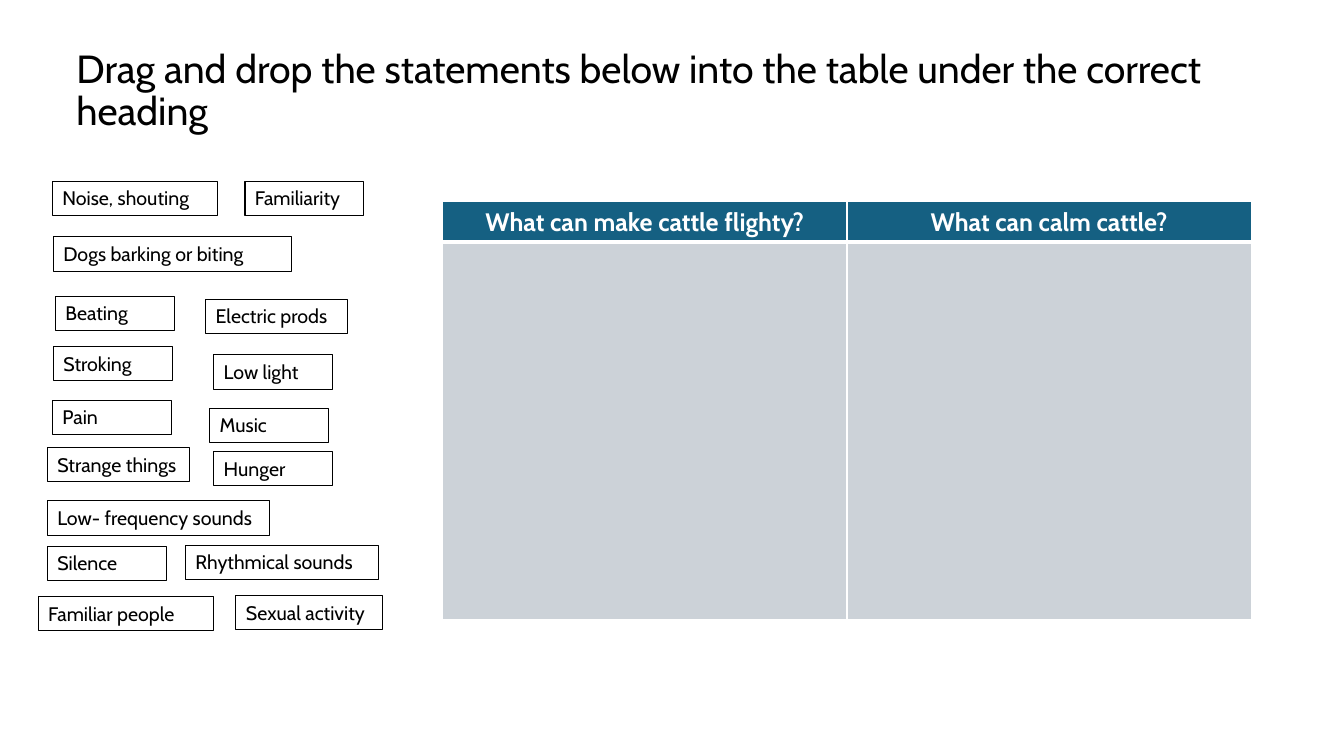
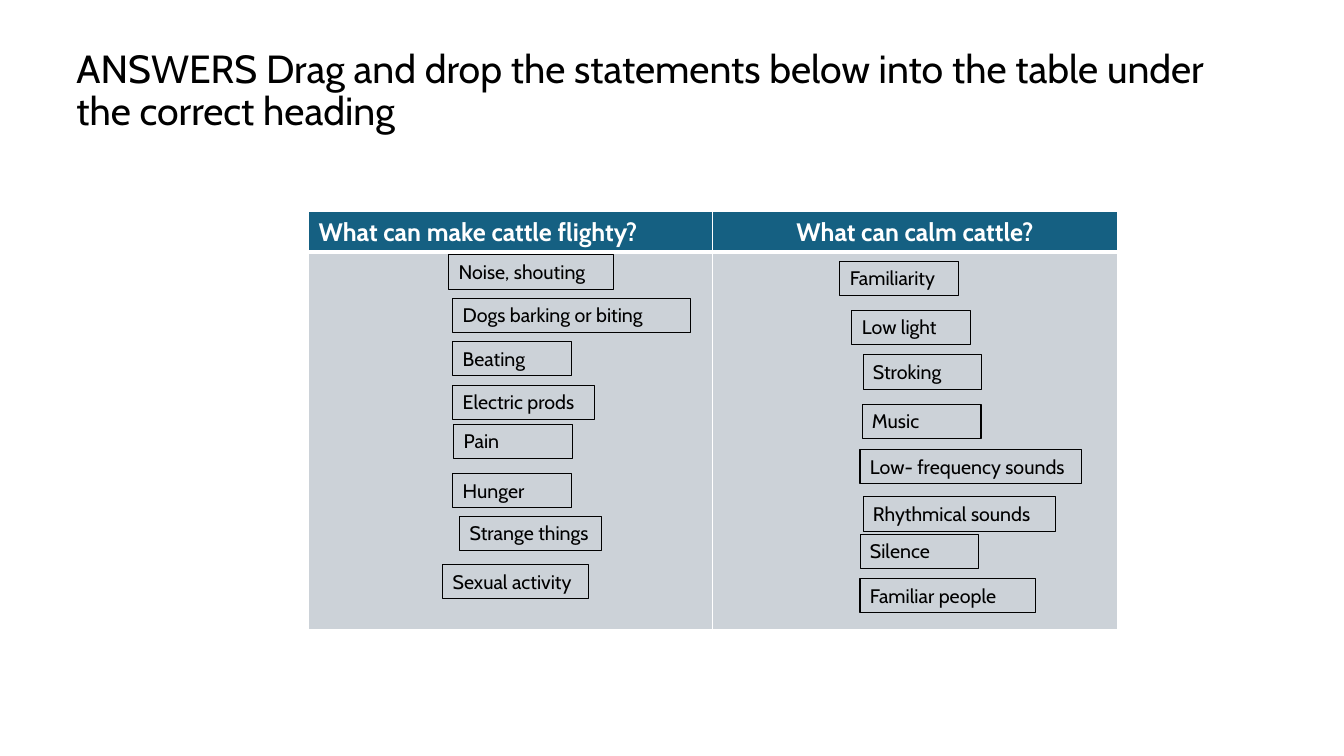
from lxml import etree
from pptx import Presentation
from pptx import util as u
from pptx.dml.color import RGBColor
from pptx.enum import shapes, text
from pptx.oxml.ns import qn

FONT = "Cabin"
BLACK, WHITE, TEAL, GREY = "000000", "FFFFFF", "156082", "CCD2D8"
CENTER, LEFT = text.PP_ALIGN.CENTER, text.PP_ALIGN.LEFT

TASK = "Drag and drop the statements below into the table under the correct heading"
HEADINGS = ["What can make cattle flighty?", "What can calm cattle?"]

# Each slide: title, table corner, heading alignments
SLIDES = [
    (TASK, (4.39, 2.0), (CENTER, CENTER)),
    ("ANSWERS " + TASK, (3.06, 2.1), (LEFT, CENTER)),
]

# Each statement: label, width, its corner on the task and on the answer slide
STATEMENTS = [
    ("Noise, shouting", 1.64, (0.52, 1.8), (4.45, 2.53)),
    ("Dogs barking or biting", 2.36, (0.53, 2.35), (4.49, 2.96)),
    ("Beating", 1.18, (0.55, 2.94), (4.49, 3.39)),
    ("Electric prods", 1.41, (2.04, 2.97), (4.49, 3.82)),
    ("Pain", 1.18, (0.52, 3.97), (4.5, 4.21)),
    ("Hunger", 1.18, (2.12, 4.48), (4.49, 4.7)),
    ("Strange things", 1.41, (0.47, 4.44), (4.56, 5.12)),
    ("Sexual activity", 1.45, (2.34, 5.91), (4.39, 5.6)),
    ("Familiarity", 1.18, (2.43, 1.8), (8.33, 2.59)),
    ("Low light", 1.18, (2.12, 3.52), (8.45, 3.08)),
    ("Stroking", 1.18, (0.53, 3.44), (8.56, 3.52)),
    ("Music", 1.18, (2.08, 4.05), (8.55, 4.01)),
    ("Low- frequency sounds", 2.2, (0.47, 4.97), (8.53, 4.46)),
    ("Rhythmical sounds", 1.91, (1.84, 5.41), (8.56, 4.93)),
    ("Silence", 1.18, (0.47, 5.42), (8.53, 5.3)),
    ("Familiar people", 1.74, (0.38, 5.92), (8.53, 5.74)),
]
STATEMENT_HEIGHT = 0.34
COLUMN_WIDTH = 4.01
ROW_HEIGHTS = [0.4, 3.75]


def rgb(value):
    return RGBColor.from_string(value)


def inches(*lengths):
    return [u.Inches(length) for length in lengths]


def style(paragraph, size, color=BLACK, bold=False, align=LEFT):
    paragraph.alignment = align
    font = paragraph.font
    font.name, font.size, font.bold = FONT, u.Pt(size), bold
    font.color.rgb = rgb(color)


def add_title(slide, title):
    frame = slide.shapes.add_textbox(*inches(0.66, 0.4, 11.76, 1.02)).text_frame
    frame.word_wrap = True
    frame.vertical_anchor = text.MSO_ANCHOR.MIDDLE
    frame.text = title
    frame.paragraphs[0].line_spacing = 0.9
    style(frame.paragraphs[0], 28)


def set_borders(cell, **widths):
    for side, width in widths.items():
        line = etree.SubElement(cell._tc.get_or_add_tcPr(), qn("a:ln" + side),
                                w=str(u.Pt(width)))
        fill = etree.SubElement(line, qn("a:solidFill"))
        etree.SubElement(fill, qn("a:srgbClr"), val=WHITE)


def add_sorting_table(slide, corner, aligns):
    table = slide.shapes.add_table(
        len(ROW_HEIGHTS), len(HEADINGS),
        *inches(*corner, COLUMN_WIDTH * len(HEADINGS), sum(ROW_HEIGHTS))).table
    for row, height in zip(table.rows, ROW_HEIGHTS):
        row.height = u.Inches(height)
    for index, (heading, align) in enumerate(zip(HEADINGS, aligns)):
        table.columns[index].width = u.Inches(COLUMN_WIDTH)
        head, body = table.cell(0, index), table.cell(1, index)
        set_borders(head, L=1, R=1, T=1, B=3)
        set_borders(body, L=1, R=1, T=3, B=1)
        for cell, color in ((head, TEAL), (body, GREY)):
            cell.fill.solid()
            cell.fill.fore_color.rgb = rgb(color)
        head.text = heading
        style(head.text_frame.paragraphs[0], 18, WHITE, True, align)


def add_statement(slide, label, width, corner):
    box = slide.shapes.add_shape(shapes.MSO_SHAPE.RECTANGLE,
                                 *inches(*corner, width, STATEMENT_HEIGHT))
    box.shadow.inherit = False
    box.fill.background()
    box.line.color.rgb = rgb(BLACK)
    box.line.width = u.Pt(0.75)
    box.text_frame.word_wrap = True
    box.text_frame.vertical_anchor = text.MSO_ANCHOR.TOP
    box.text_frame.text = label
    style(box.text_frame.paragraphs[0], 14)


def main():
    deck = Presentation()
    deck.slide_width, deck.slide_height = inches(13.33, 7.5)
    for number, (title, corner, aligns) in enumerate(SLIDES):
        slide = deck.slides.add_slide(deck.slide_layouts[6])
        add_title(slide, title)
        add_sorting_table(slide, corner, aligns)
        for label, width, *corners in STATEMENTS:
            add_statement(slide, label, width, corners[number])
    deck.save("out.pptx")


if __name__ == "__main__":
    main()
